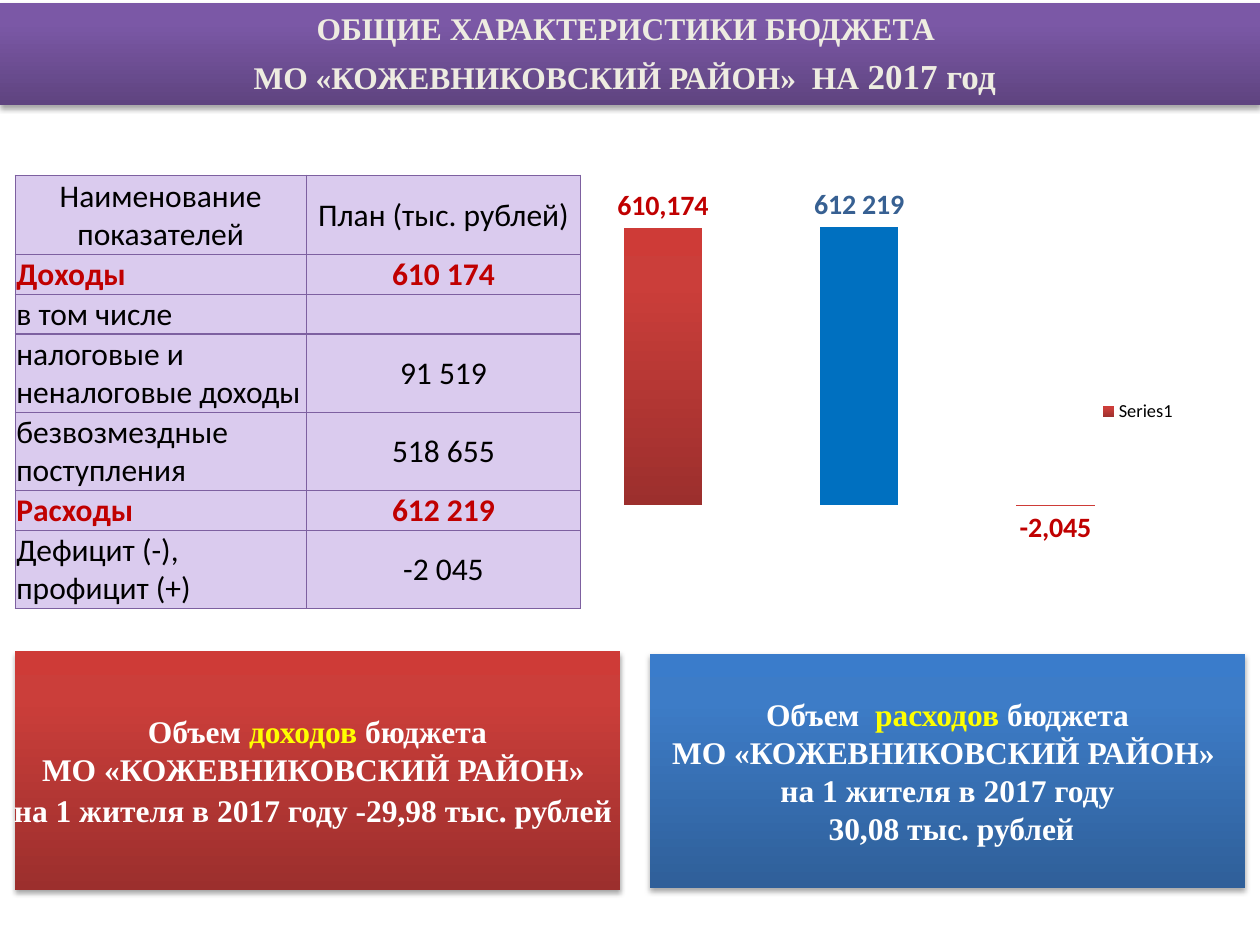
import pptx
import pptx.chart.data
import pptx.dml.color
import pptx.enum.chart
import pptx.enum.shapes
import pptx.enum.text
import pptx.oxml
import pptx.oxml.ns
import pptx.util

RED = [("9C2F2D", 0), ("CB3E3A", 80), ("CE3B37", 100)]
BLUE = [("2F5F99", 0), ("3D7CC7", 80), ("3A7CCB", 100)]
VIOLET = [("5F4480", 0), ("7B58A6", 80), ("7C57A8", 100)]
NS = pptx.oxml.ns.nsdecls("a", "c")
ALIGN = pptx.enum.text.PP_ALIGN
MIDDLE = pptx.enum.text.MSO_ANCHOR.MIDDLE


def tint(code):
    return pptx.dml.color.RGBColor.from_string(code)


def xml(text):
    head, tail = text.split(">", 1)
    mark = "/" if head.endswith("/") else ""
    return pptx.oxml.parse_xml(f"{head.rstrip('/')} {NS}{mark}>{tail}")


class Deck:
    """Draws styled elements on a slide with a grid of 100 columns and 75 rows."""

    serif, sans = "Times New Roman", "Calibri"
    dark, strong, edge, cell = "000000", "C00000", "7D60A0", "DACBEE"

    def __init__(self):
        self.file = pptx.Presentation()
        self.file.slide_width = pptx.util.Inches(10)
        self.file.slide_height = pptx.util.Inches(7.5)
        self.unit = self.file.slide_width / 100
        self.slide = self.file.slides.add_slide(self.file.slide_layouts[6])

    def span(self, *units):
        return [round(n * self.unit) for n in units]

    def font(self, font, face, size, color, bold=False):
        font.name, font.size, font.bold = face, pptx.util.Pt(size), bold
        font.color.rgb = tint(color)

    def grade(self, fill, props, stops):
        fill.gradient()
        old = props.find(pptx.oxml.ns.qn("a:gradFill"))
        marks = "".join(f'<a:gs pos="{at * 1000}"><a:srgbClr val="{code}"/></a:gs>'
                        for code, at in stops)
        new = xml(f'<a:gradFill rotWithShape="1"><a:gsLst>{marks}</a:gsLst>'
                  '<a:lin ang="16200000" scaled="0"/></a:gradFill>')
        props.replace(old, new)

    def panel(self, place, stops, lines, color="FFFFFF", wrap=False):
        box = self.slide.shapes.add_shape(
            pptx.enum.shapes.MSO_SHAPE.RECTANGLE, *self.span(*place))
        props = box._element.spPr
        self.grade(box.fill, props, stops)
        box.line.fill.background()
        props.append(xml(
            '<a:effectLst><a:outerShdw blurRad="39400" dist="22900" dir="5400000" '
            'rotWithShape="0"><a:srgbClr val="000000"><a:alpha val="35000"/>'
            '</a:srgbClr></a:outerShdw></a:effectLst>'))
        frame = box.text_frame
        frame.word_wrap, frame.vertical_anchor = wrap, MIDDLE
        for i, line in enumerate(lines):
            para = frame.add_paragraph() if i else frame.paragraphs[0]
            para.alignment = ALIGN.CENTER
            self.font(para.font, self.serif, 18, color, True)
            for text, size, hue in line:
                run = para.add_run()
                run.text = text
                self.font(run.font, self.serif, size, hue or color, True)

    def chart(self, place, vals, notes):
        data = pptx.chart.data.CategoryChartData(number_format="#,##0")
        data.categories = [str(i + 1) for i in range(len(vals))]
        data.add_series("Series1", vals)
        kinds = pptx.enum.chart
        chart = self.slide.shapes.add_chart(
            kinds.XL_CHART_TYPE.COLUMN_CLUSTERED, *self.span(*place), data).chart
        self.font(chart.font, self.sans, 10, self.dark)
        chart.has_title = False
        chart.category_axis.visible = chart.value_axis.visible = False
        chart.value_axis.has_major_gridlines = False
        chart.value_axis.minimum_scale = -100000
        chart.value_axis.maximum_scale = 700000
        chart.has_legend = True
        chart.legend.position = kinds.XL_LEGEND_POSITION.RIGHT
        chart.legend.include_in_layout = False
        self.font(chart.legend.font, self.sans, 10.5, self.dark)
        plot = chart.plots[0]
        plot.gap_width, plot.vary_by_categories = 150, False
        bars = plot.series[0]
        bars.invert_if_negative = False
        self.grade(bars.format.fill, bars._element.get_or_add_spPr(), RED)
        tags = bars.data_labels
        tags.show_value = True
        tags.number_format, tags.number_format_is_linked = "#,##0", False
        tags.position = kinds.XL_LABEL_POSITION.OUTSIDE_END
        self.font(tags.font, self.sans, 16, self.strong, True)
        for i, (text, fill, color) in notes.items():
            point = bars.points[i]
            point.format.fill.solid()
            point.format.fill.fore_color.rgb = tint(fill)
            tag = point.data_label
            run = tag.text_frame.paragraphs[0].add_run()
            run.text = text
            self.font(run.font, self.sans, 16, color, True)
            tag.position = kinds.XL_LABEL_POSITION.OUTSIDE_END
        area = chart._chartSpace.chart.plotArea
        for old in area.findall(pptx.oxml.ns.qn("c:layout")):
            area.remove(old)
        area.insert(0, self.layout(inner=True, x=0.02, y=0.02, w=0.83, h=0.96))
        key = chart.legend._element
        for old in key.findall(pptx.oxml.ns.qn("c:layout")):
            key.remove(old)
        key.insert(1, self.layout(x=0.77, y=0.57))

    def layout(self, inner=False, **share):
        target = '<c:layoutTarget val="inner"/>' if inner else ""
        modes = '<c:xMode val="edge"/><c:yMode val="edge"/>'
        sizes = "".join(f'<c:{k} val="{v}"/>' for k, v in share.items())
        return xml(f"<c:layout><c:manualLayout>{target}{modes}{sizes}"
                   "</c:manualLayout></c:layout>")

    def table(self, left, top, cols, rows, cells, bold):
        table = self.slide.shapes.add_table(
            len(rows), len(cols),
            *self.span(left, top, sum(cols), sum(rows))).table
        table.first_row = table.horz_banding = False
        for col, width in zip(table.columns, self.span(*cols)):
            col.width = width
        for row, height in zip(table.rows, self.span(*rows)):
            row.height = height
        for r, line in enumerate(cells):
            for c, text in enumerate(line):
                cell = table.cell(r, c)
                cell.margin_left = cell.margin_right = cell.margin_top = self.span(0.1)[0]
                cell.margin_bottom = 0
                cell.vertical_anchor = MIDDLE
                cell.fill.solid()
                cell.fill.fore_color.rgb = tint(self.cell)
                for i, side in enumerate("LRTB"):
                    cell._tc.get_or_add_tcPr().insert(i, xml(
                        f'<a:ln{side} w="9525"><a:solidFill><a:srgbClr val="{self.edge}"/>'
                        f'</a:solidFill></a:ln{side}>'))
                para = cell.text_frame.paragraphs[0]
                para.text = text
                para.alignment = ALIGN.CENTER if c or not r else ALIGN.LEFT
                hue = self.strong if r in bold else self.dark
                self.font(para.font, self.sans, 18, hue, r in bold)


def main():
    deck = Deck()
    name = "МО «КОЖЕВНИКОВСКИЙ РАЙОН» "
    deck.panel((0, 0.2, 100, 8.1), VIOLET, [
        [("ОБЩИЕ ХАРАКТЕРИСТИКИ БЮДЖЕТА ", 18, None)],
        [(name + " НА ", 18, None), ("2017 год", 20, None), (" ", 24, None)],
    ], "EEECE1", True)
    boxes = [
        ((1.2, 51.7, 48, 18.9), RED, "Объем ", "доходов",
         [[("на 1 жителя в 2017 году -29,98 тыс. рублей", 18, None), (" ", 20, None)]]),
        ((51.6, 51.9, 47.2, 18.6), BLUE, "Объем  ", "расходов",
         [[("на 1 жителя в 2017 году", 18, None)], [(" 30,08 тыс. рублей", 18, None)]]),
    ]
    for place, stops, start, word, rest in boxes:
        first = [(start, 18, None), (word, 18, "FFFF00"), (" бюджета", 18, None)]
        deck.panel(place, stops, [first, [(name, 18, None)], *rest])
    deck.chart((43.7, 14.3, 56.3, 30), (610174, 612219, -2045),
               {1: ("612 219", "0070C0", "376092")})
    one, two = 3.1, 6.2
    deck.table(1.2, 13.9, (23.1, 21.8), (6.3, one, one, two, two, one, two), [
        ("Наименование показателей", "План (тыс. рублей)"),
        ("Доходы", "610 174"),
        ("в том числе", ""),
        ("налоговые и неналоговые доходы", "91 519"),
        ("безвозмездные поступления", "518 655"),
        ("Расходы", "612 219"),
        ("Дефицит (-), профицит (+)", "-2 045"),
    ], bold=(1, 5))
    deck.file.save("out.pptx")


if __name__ == "__main__":
    main()
